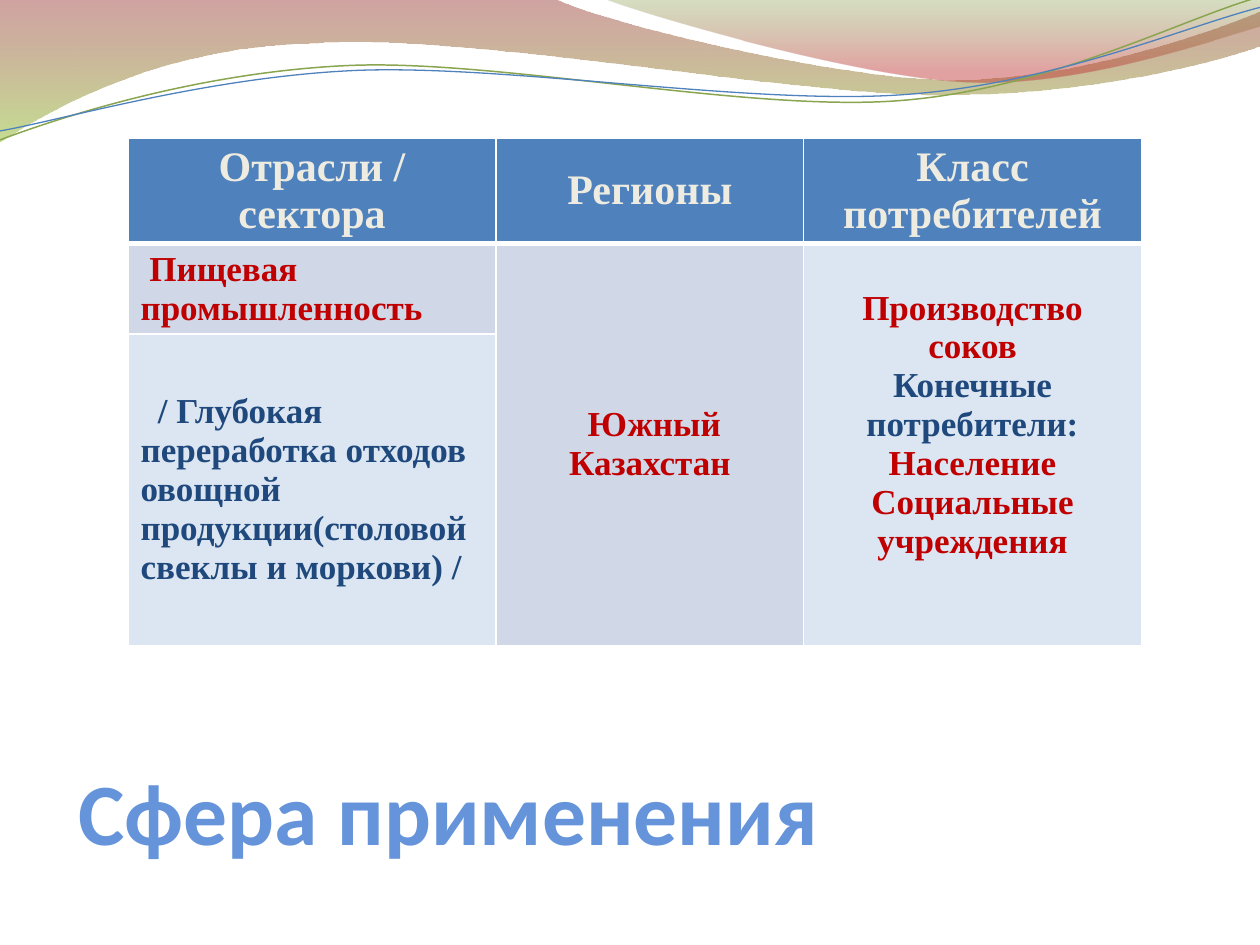
from dataclasses import dataclass
from math import cos, radians, sin
from typing import Optional

from lxml.etree import SubElement
from pptx import Presentation
from pptx.dml.color import RGBColor
from pptx.enum.text import MSO_ANCHOR, PP_ALIGN
from pptx.oxml.ns import qn
from pptx.util import Cm, Pt

WHITE = RGBColor(0xFF, 0xFF, 0xFF)
BLUE = RGBColor(0x4F, 0x81, 0xBD)
GREEN = RGBColor(0x89, 0xA5, 0x4F)
BRICK = RGBColor(0x97, 0x33, 0x30)
LIME = RGBColor(0x95, 0xC2, 0x38)
OLIVE = RGBColor(0x76, 0x95, 0x37)
SCARLET = RGBColor(0xBE, 0x33, 0x30)
TITLE_BLUE = RGBColor(0x65, 0x94, 0xDA)
CREAM = RGBColor(0xEE, 0xEC, 0xE1)
RED = RGBColor(0xC0, 0x00, 0x00)
NAVY = RGBColor(0x1F, 0x49, 0x7D)
BAND = RGBColor(0xD0, 0xD8, 0xE8)
PALE = RGBColor(0xDC, 0xE6, 0xF2)

TABLE_FONT = "Times New Roman"
CELL_MARGIN = 0.13
LINE_TILT = 2.7


@dataclass
class GradientStop:
    position: float
    color: RGBColor
    opacity: int


@dataclass
class Wave:
    segments: list
    gradient: Optional[list] = None
    line: Optional[RGBColor] = None
    width: float = 0
    pivot: tuple = (0, 0)
    tilt: float = 0


@dataclass
class Entry:
    row: int
    column: int
    lines: list
    fill: RGBColor
    size: int = 20
    align: PP_ALIGN = PP_ALIGN.CENTER
    indent: float = 0
    bottom_margin: float = CELL_MARGIN
    rule_below: float = 1


WAVES = [
    Wave(
        [
            [(0, 0)],
            [(11.18, -0.03)],
            [(12.09, 0.43), (16.87, 1.6), (19.25, 1.6)],
            [(21.67, 1.6), (24.33, 0.66), (25.4, 0.23)],
            [(25.43, 0.91)],
            [(24.97, 1.12), (22.1, 1.93), (18.95, 1.91)],
            [(15.8, 1.91), (9.7, 0.71), (6.53, 0.86)],
            [(3.28, 0.91), (1.17, 2.11), (-0.03, 2.87)],
        ],
        gradient=[GradientStop(0, BRICK, 45), GradientStop(1, LIME, 55)],
    ),
    Wave(
        [
            [(12.17, -0.03)],
            [(12.93, 0.28), (17.32, 1.57), (19.53, 1.65)],
            [(21.74, 1.75), (24.41, 0.81), (25.4, 0.53)],
            [(25.4, 0)],
        ],
        gradient=[GradientStop(0, OLIVE, 30), GradientStop(0.8, SCARLET, 45)],
    ),
    Wave(
        [
            [(0, 2.82)],
            [(1.22, 2.36), (4.01, 1.45), (7.04, 1.32)],
            [(10.03, 1.19), (15.06, 2.26), (18.11, 2.03)],
            [(21.16, 1.8), (23.83, 0.38), (25.35, -0.05)],
        ],
        line=GREEN, width=0.85, pivot=(12.67, 1.46), tilt=LINE_TILT,
    ),
    Wave(
        [
            [(0, 2.64)],
            [(1.19, 2.44), (4.17, 1.55), (7.19, 1.42)],
            [(10.24, 1.3), (15.16, 2.13), (18.21, 1.91)],
            [(21.23, 1.7), (23.9, 0.53), (25.4, 0.15)],
        ],
        line=BLUE, width=0.75, pivot=(12.69, 1.5), tilt=LINE_TILT,
    ),
]

HEADINGS = ["Отрасли / сектора", "Регионы", "Класс потребителей"]
ENTRIES = [
    Entry(0, column, [(heading, CREAM)], BLUE, size=24, rule_below=3)
    for column, heading in enumerate(HEADINGS)
] + [
    Entry(1, 0, [(" Пищевая промышленность", RED)], BAND, align=PP_ALIGN.LEFT),
    Entry(1, 1, [(" Южный Казахстан", RED)], BAND),
    Entry(
        1, 2,
        [
            ("Производство соков", RED),
            ("Конечные потребители:", NAVY),
            ("Население", RED),
            ("Социальные учреждения", RED),
        ],
        PALE, bottom_margin=0.93,
    ),
    Entry(2, 0, [("/ Глубокая переработка отходов овощной продукции"
                  "(столовой свеклы и моркови) /", NAVY)], PALE,
          align=PP_ALIGN.LEFT, indent=0.35),
]


def level_point(point: tuple, wave: Wave) -> tuple:
    angle = radians(wave.tilt)
    dx, dy = (value - center for value, center in zip(point, wave.pivot))
    return (
        Cm(wave.pivot[0] + dx * cos(angle) - dy * sin(angle)),
        Cm(wave.pivot[1] + dx * sin(angle) + dy * cos(angle)),
    )


def bend_segments(shape, segments: list) -> None:
    steps = iter(list(shape.element.iter(qn("a:lnTo"))))
    for segment in segments[1:]:
        lines = [next(steps) for _ in segment]
        if len(lines) == 1:
            continue
        curve = lines[0].makeelement(qn("a:cubicBezTo"))
        lines[0].addprevious(curve)
        for line in lines:
            curve.append(line[0])
            line.getparent().remove(line)


def draw_wave(slide, wave: Wave) -> None:
    points = [level_point(point, wave) for part in wave.segments for point in part]
    builder = slide.shapes.build_freeform(*points[0])
    builder.add_line_segments(points[1:], close=wave.gradient is not None)
    shape = builder.convert_to_shape()
    bend_segments(shape, wave.segments)
    shape.rotation = -wave.tilt
    shape.shadow.inherit = False
    if wave.gradient is None:
        shape.fill.background()
        shape.line.color.rgb = wave.line
        shape.line.width = Pt(wave.width)
        return
    shape.line.fill.background()
    shape.fill.gradient()
    shape.fill.gradient_angle = 270
    for target, stop in zip(shape.fill.gradient_stops, wave.gradient):
        target.position = stop.position
        target.color.rgb = stop.color
    colors = shape.element.spPr.iter(qn("a:srgbClr"))
    for color, stop in zip(colors, wave.gradient):
        SubElement(color, qn("a:alpha"), val=str(stop.opacity * 1000))


def set_borders(cell, rule_below: float) -> None:
    properties = cell._tc.get_or_add_tcPr()
    for side, width in (("L", 1), ("R", 1), ("T", 1), ("B", rule_below)):
        line = SubElement(properties, qn(f"a:ln{side}"), w=str(Pt(width)))
        fill = SubElement(line, qn("a:solidFill"))
        SubElement(fill, qn("a:srgbClr"), val=str(WHITE))


def fill_cell(table, entry: Entry) -> None:
    cell = table.cell(entry.row, entry.column)
    set_borders(cell, entry.rule_below)
    cell.fill.solid()
    cell.fill.fore_color.rgb = entry.fill
    cell.vertical_anchor = MSO_ANCHOR.MIDDLE
    cell.margin_bottom = Cm(entry.bottom_margin)
    cell.text_frame.text = "\n".join(text for text, _ in entry.lines)
    for paragraph, (_, color) in zip(cell.text_frame.paragraphs, entry.lines):
        paragraph.alignment = entry.align
        if entry.indent:
            paragraph._p.get_or_add_pPr().set("indent", str(Cm(entry.indent)))
        font = paragraph.runs[0].font
        font.name, font.size, font.bold = TABLE_FONT, Pt(entry.size), True
        font.color.rgb = color


def add_scope_table(slide) -> None:
    frame = slide.shapes.add_table(3, 3, Cm(2.58), Cm(2.78), Cm(20.43), Cm(10.2))
    table = frame.table
    for column, width in zip(table.columns, (7.42, 6.2, 6.81)):
        column.width = Cm(width)
    for row, height in zip(table.rows, (2.13, 1.79, 6.28)):
        row.height = Cm(height)
    for column in (1, 2):
        table.cell(1, column).merge(table.cell(2, column))
    for entry in ENTRIES:
        fill_cell(table, entry)


def set_title(title) -> None:
    title.left, title.top, title.width, title.height = map(Cm, (1.58, 14.88, 22.73, 2.51))
    frame = title.text_frame
    frame.text = "Сфера применения"
    frame.vertical_anchor = MSO_ANCHOR.BOTTOM
    frame.margin_left = frame.margin_right = frame.margin_bottom = 0
    frame.paragraphs[0].alignment = PP_ALIGN.LEFT
    font = frame.paragraphs[0].runs[0].font
    font.name, font.size, font.bold = "Calibri", Pt(50), True
    font.color.rgb = TITLE_BLUE


def main() -> None:
    presentation = Presentation()
    presentation.slide_width, presentation.slide_height = Cm(25.4), Cm(19.05)
    slide = presentation.slides.add_slide(presentation.slide_layouts[5])
    for wave in WAVES:
        draw_wave(slide, wave)
    set_title(slide.shapes.title)
    add_scope_table(slide)
    presentation.save("out.pptx")


if __name__ == "__main__":
    main()
